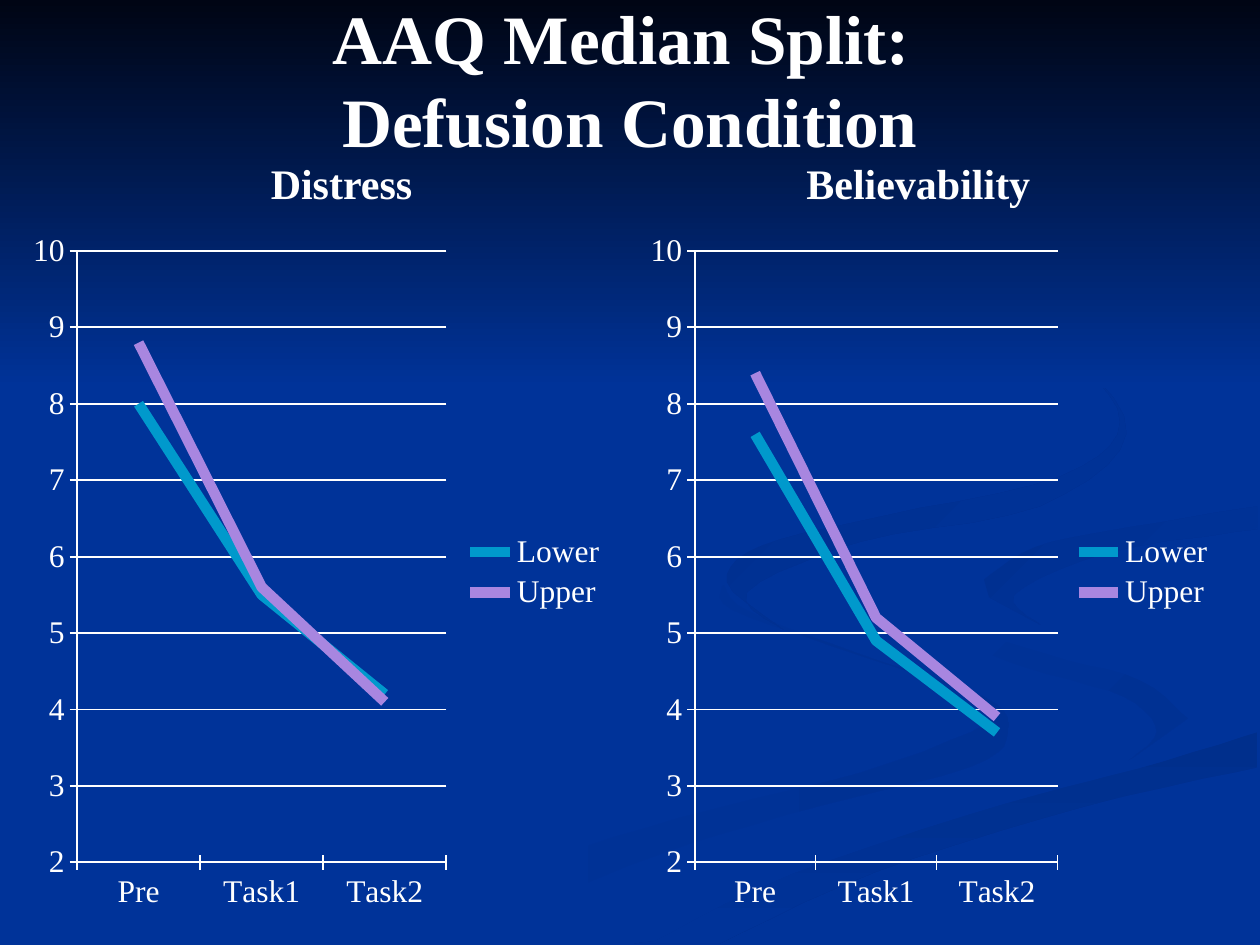
from dataclasses import dataclass

from lxml.etree import SubElement
from pptx import Presentation
from pptx.chart.data import CategoryChartData
from pptx.dml.color import RGBColor
from pptx.enum.chart import XL_CHART_TYPE, XL_LEGEND_POSITION, XL_MARKER_STYLE, XL_TICK_MARK
from pptx.enum.text import MSO_ANCHOR, PP_ALIGN
from pptx.oxml.ns import qn
from pptx.util import Cm, Pt


@dataclass(frozen=True)
class Theme:
    font: str = "Times New Roman"
    background: str = "003399"
    text: str = "FFFFFF"
    lower: str = "0099CC"
    upper: str = "A886E0"
    title_size: float = 39.6
    heading_size: float = 24
    chart_size: float = 18
    grid_width: float = 1
    series_width: float = 6


@dataclass(frozen=True)
class Ribbon:
    start_color: str
    end_color: str
    angle: int  # clockwise, in degrees
    edges: tuple  # each edge is a smooth curve through its points


@dataclass(frozen=True)
class Heading:
    lines: tuple
    left: float
    top: float
    width: float
    height: float
    size: float
    anchor: MSO_ANCHOR


@dataclass(frozen=True)
class Measure:
    name: str
    heading_left: float
    chart_left: float
    chart_width: float
    lower: tuple
    upper: tuple


THEME = Theme()
TASKS = ("Pre", "Task1", "Task2")
PLOT_AREA = {"x": 0.093, "y": 0.043, "w": 0.617, "h": 0.87}
CURVE_STEPS = 5

MEASURES = (
    Measure("Distress", 1.27, 0.43, 12.07, (8, 5.5, 4.2), (8.8, 5.6, 4.1)),
    Measure("Believability", 12.9, 12.9, 11.86, (7.6, 4.9, 3.7), (8.4, 5.2, 3.9)),
)

# Edges shared by neighbouring ribbons, in hundredths of an inch
BEND = ((724, 464), (745, 490), (831, 519), (905, 540), (943, 570))
SWEEP = ((519, 747), (630, 693), (797, 638), (903, 610), (998, 581))
BRANCH = ((781, 460), (822, 434), (899, 418), (998, 402))

RIBBONS = (
    Ribbon("003399", "003193", 0, (
        ((574, 464), (594, 485), (682, 519), (781, 553), (800, 581), (769, 609),
         (623, 647), (499, 687), (361, 749)),
        ((300, 749), (417, 690), (539, 649), (684, 613), (783, 574), (776, 553),
         (679, 519), (581, 484), (574, 464)))),
    Ribbon("003399", "003193", 45, (
        BEND, ((894, 605), (918, 581), (892, 553), (815, 530), (746, 500), (724, 464)))),
    Ribbon("002F8C", "003399", 90, (
        SWEEP, ((998, 609), (861, 640), (695, 692), (571, 749)), ((503, 749),))),
    Ribbon("003399", "003399", 0, (
        BEND, ((943, 570), (892, 605), (704, 655), (573, 703), (477, 749)),
        SWEEP, ((998, 538), (904, 519), (817, 492), (781, 463)),
        BRANCH, ((998, 387), (874, 408), (755, 432), (724, 464)))),
    Ribbon("003091", "003399", 45, (
        BRANCH, ((998, 420), (878, 439), (805, 472), (826, 496)), ((785, 474),))),
    Ribbon("002F8E", "003399", 45, (
        ((762, 233), (846, 279), (889, 335), (842, 378), (704, 409), (605, 433),
         (577, 462), (622, 500)),
        ((622, 500), (593, 470), (683, 430), (825, 402), (894, 344), (843, 275),
         (762, 233)))),
    # Dark band across the top
    Ribbon("000514", "003399", 90, (((0, 0), (0, 308)), ((1000, 308), (1000, 0)))),
)


def color(code: str) -> RGBColor:
    return RGBColor.from_string(code)


def smooth_edge(points: tuple) -> list:
    """Return points along a Catmull-Rom curve through the given points."""
    padded = (points[0], *points, points[-1])
    curve = [points[0]]
    for a, b, c, d in zip(padded, padded[1:], padded[2:], padded[3:]):
        for step in range(1, CURVE_STEPS + 1):
            t = step / CURVE_STEPS
            curve.append(tuple(
                q + t * (r - p + t * (2 * p - 5 * q + 4 * r - s + t * (3 * q - p - 3 * r + s))) / 2
                for p, q, r, s in zip(a, b, c, d)))
    return curve


def draw_ribbon(slide, ribbon: Ribbon) -> None:
    outline = [point for edge in ribbon.edges for point in smooth_edge(edge)]
    builder = slide.shapes.build_freeform(*outline[0], scale=Cm(0.0254))
    builder.add_line_segments(outline[1:], close=True)
    band = builder.convert_to_shape()
    band.shadow.inherit = False
    band.line.fill.background()
    if ribbon.start_color == ribbon.end_color:
        band.fill.solid()
        band.fill.fore_color.rgb = color(ribbon.start_color)
        return
    band.fill.gradient()
    band.fill.gradient_angle = -ribbon.angle % 360
    for stop, code in zip(band.fill.gradient_stops, (ribbon.start_color, ribbon.end_color)):
        stop.color.rgb = color(code)


def draw_heading(slide, heading: Heading) -> None:
    box = slide.shapes.add_textbox(
        Cm(heading.left), Cm(heading.top), Cm(heading.width), Cm(heading.height))
    frame = box.text_frame
    frame.word_wrap = True
    frame.vertical_anchor = heading.anchor
    paragraph = frame.paragraphs[0]
    paragraph.alignment = PP_ALIGN.CENTER
    for index, line in enumerate(heading.lines):
        if index:
            paragraph.add_line_break()
        run = paragraph.add_run()
        run.text = line
        run.font.name, run.font.size, run.font.bold = THEME.font, Pt(heading.size), True
        run.font.color.rgb = color(THEME.text)


def style_line(line, code: str, width: float) -> None:
    line.color.rgb = color(code)
    line.width = Pt(width)


def fix_plot_area(chart) -> None:
    plot_area = chart.plots[0]._element.getparent()
    for old in plot_area.findall(qn("c:layout")):
        plot_area.remove(old)
    layout = SubElement(plot_area, qn("c:layout"))
    plot_area.insert(0, layout)
    manual = SubElement(layout, qn("c:manualLayout"))
    settings = {"layoutTarget": "inner", "xMode": "edge", "yMode": "edge", **PLOT_AREA}
    for tag, value in settings.items():
        SubElement(manual, qn(f"c:{tag}")).set("val", str(value))


def draw_chart(slide, measure: Measure) -> None:
    data = CategoryChartData()
    data.categories = TASKS
    data.add_series("Lower", measure.lower)
    data.add_series("Upper", measure.upper)
    chart = slide.shapes.add_chart(
        XL_CHART_TYPE.LINE, Cm(measure.chart_left), Cm(4.45),
        Cm(measure.chart_width), Cm(14.17), data).chart
    chart.has_title = False
    chart.font.name, chart.font.size = THEME.font, Pt(THEME.chart_size)
    chart.font.color.rgb = color(THEME.text)
    chart.has_legend = True
    chart.legend.position = XL_LEGEND_POSITION.RIGHT
    chart.legend.include_in_layout = False
    # Axes and gridlines
    scale = chart.value_axis
    scale.minimum_scale, scale.maximum_scale, scale.major_unit = 2, 10, 1
    scale.has_major_gridlines = True
    style_line(scale.major_gridlines.format.line, THEME.text, THEME.grid_width)
    for axis in (chart.category_axis, scale):
        axis.major_tick_mark = XL_TICK_MARK.CROSS
        style_line(axis.format.line, THEME.text, THEME.grid_width)
    # Series
    chart.plots[0].vary_by_categories = False
    for series, code in zip(chart.plots[0].series, (THEME.lower, THEME.upper)):
        series.smooth = False
        series.marker.style = XL_MARKER_STYLE.NONE
        style_line(series.format.line, code, THEME.series_width)
    fix_plot_area(chart)


def main() -> None:
    deck = Presentation()
    deck.slide_width, deck.slide_height = Cm(25.4), Cm(19.05)
    slide = deck.slides.add_slide(deck.slide_layouts[6])
    # Backdrop
    slide.background.fill.solid()
    slide.background.fill.fore_color.rgb = color(THEME.background)
    for ribbon in RIBBONS:
        draw_ribbon(slide, ribbon)
    # Title, then a heading and a chart for each measure
    draw_heading(slide, Heading(("AAQ Median Split: ", "Defusion Condition"), 1.27, 0, 22.86,
                                3.17, THEME.title_size, MSO_ANCHOR.MIDDLE))
    for measure in MEASURES:
        draw_heading(slide, Heading((measure.name,), measure.heading_left, 2.54, 11.23,
                                    1.78, THEME.heading_size, MSO_ANCHOR.BOTTOM))
        draw_chart(slide, measure)
    deck.save("out.pptx")


if __name__ == "__main__":
    main()
